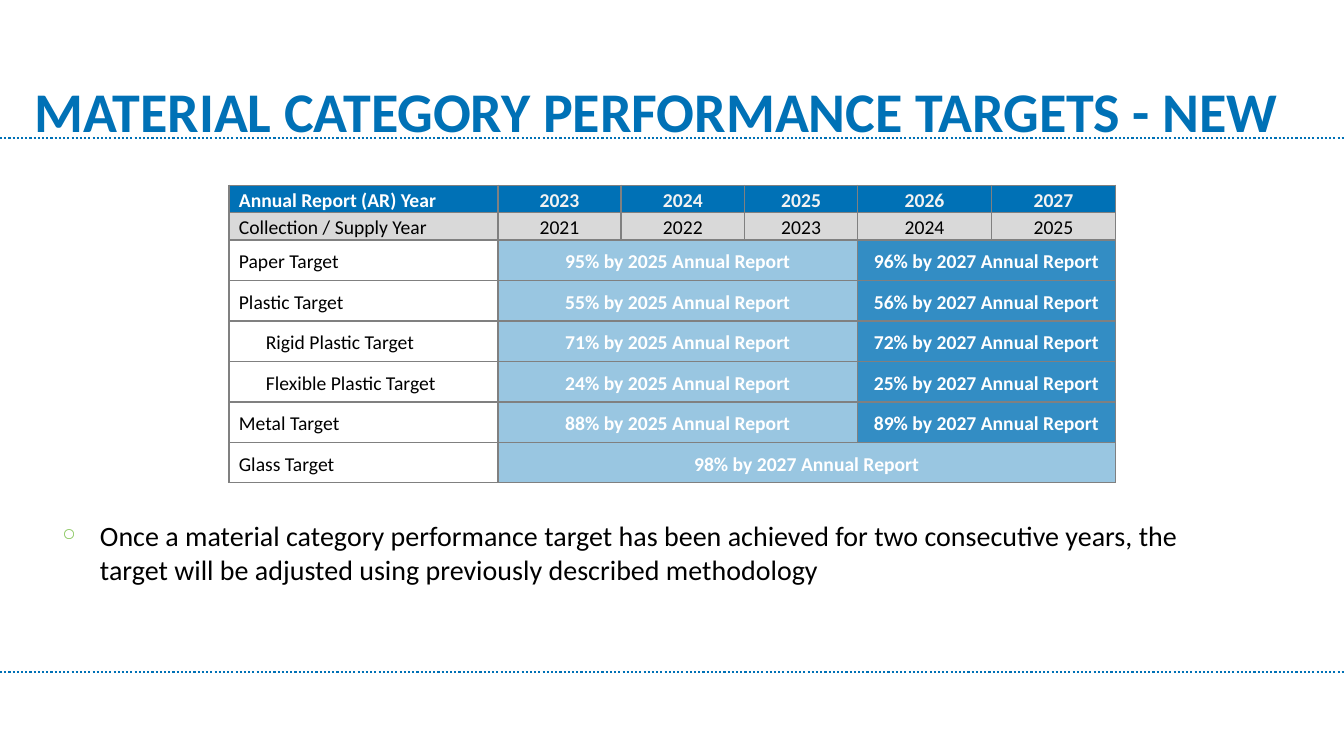
from lxml import etree
from pptx import Presentation
from pptx.dml.color import RGBColor
from pptx.enum.dml import MSO_LINE
from pptx.enum.shapes import MSO_CONNECTOR
from pptx.enum.text import MSO_ANCHOR, MSO_AUTO_SIZE, PP_ALIGN
from pptx.oxml.ns import qn
from pptx.util import Cm, Pt

BLUE = RGBColor(0x00, 0x71, 0xB6)
MID_BLUE = RGBColor(0x33, 0x8D, 0xC4)
LIGHT_BLUE = RGBColor(0x99, 0xC6, 0xE1)
GREY = RGBColor(0xD9, 0xD9, 0xD9)
BORDER_GREY = RGBColor(0x80, 0x80, 0x80)
PALE = RGBColor(0xF2, 0xF2, 0xF2)
GREEN = RGBColor(0x85, 0xC5, 0x59)
WHITE = RGBColor(0xFF, 0xFF, 0xFF)
BLACK = RGBColor(0x00, 0x00, 0x00)
LEFT, CENTER = PP_ALIGN.LEFT, PP_ALIGN.CENTER
MIDDLE, BOTTOM, TOP = MSO_ANCHOR.MIDDLE, MSO_ANCHOR.BOTTOM, MSO_ANCHOR.TOP
DOTTED = MSO_LINE.ROUND_DOT
STRAIGHT = MSO_CONNECTOR.STRAIGHT
NO_AUTOFIT = MSO_AUTO_SIZE.NONE
TITLE_ONLY = 5
SLIDE_WIDTH, SLIDE_HEIGHT = 33.87, 19.05

COLUMN_WIDTHS = [6.78, 3.1, 3.12, 2.84, 3.38, 3.12]
HEADER_HEIGHT, TARGET_HEIGHT = 0.69, 1.02
REPORT_YEARS = ["Annual Report (AR) Year", "2023", "2024", "2025", "2026", "2027"]
SUPPLY_YEARS = ["Collection / Supply Year", "2021", "2022", "2023", "2024", "2025"]
TARGETS = [
    ("Paper Target", 0, "95%", "96%"),
    ("Plastic Target", 0, "55%", "56%"),
    ("Rigid Plastic Target", 0.68, "71%", "72%"),
    ("Flexible Plastic Target", 0.68, "24%", "25%"),
    ("Metal Target", 0, "88%", "89%"),
    ("Glass Target", 0, None, "98%"),
]
ADJUSTMENT = (
    "Once a material category performance target has been achieved for two "
    "consecutive years, the target will be adjusted using previously described methodology"
)


class SlideBuilder:
    font_name = "Calibri"

    def __init__(self, deck):
        self.page = deck.slides.add_slide(deck.slide_layouts[TITLE_ONLY])

    def style(self, paragraph, size, color, bold=False, align=LEFT):
        paragraph.alignment = align
        paragraph.font.name = self.font_name
        paragraph.font.size = Pt(size)
        paragraph.font.bold = bold
        paragraph.font.color.rgb = color

    def title(self, text, left, top, width, height):
        box = self.page.shapes.title
        box.left, box.top, box.width, box.height = map(Cm, (left, top, width, height))
        frame = box.text_frame
        frame.text = text
        frame.word_wrap = True
        frame.auto_size = NO_AUTOFIT
        frame.vertical_anchor = MIDDLE
        self.style(frame.paragraphs[0], 40, BLUE, bold=True)

    def dotted_rule(self, y):
        rule = self.page.shapes.add_connector(STRAIGHT, 0, Cm(y), Cm(SLIDE_WIDTH), Cm(y))
        rule.line.color.rgb = BLUE
        rule.line.width = Pt(1.5)
        rule.line.dash_style = DOTTED
        etree.SubElement(rule._element.spPr, qn("a:effectLst"))

    def bullet(self, text, left, top, width, height):
        box = self.page.shapes.add_textbox(Cm(left), Cm(top), Cm(width), Cm(height))
        frame = box.text_frame
        frame.word_wrap = True
        frame.vertical_anchor = TOP
        paragraph = frame.paragraphs[0]
        paragraph.text = text
        properties = paragraph._p.get_or_add_pPr()
        properties.set("marL", str(Cm(0.95)))
        properties.set("indent", str(Cm(-0.95)))
        color = etree.SubElement(properties, qn("a:buClr"))
        etree.SubElement(color, qn("a:srgbClr"), val=str(GREEN))
        etree.SubElement(properties, qn("a:buSzPct"), val="61000")
        etree.SubElement(properties, qn("a:buChar"), char="○")
        self.style(paragraph, 20, BLACK)

    def table(self, left, top, widths, heights):
        frame = self.page.shapes.add_table(
            len(heights), len(widths), Cm(left), Cm(top), Cm(sum(widths)), Cm(sum(heights))
        )
        grid = frame.table
        for column, width in zip(grid.columns, widths):
            column.width = Cm(width)
        for row, height in zip(grid.rows, heights):
            row.height = Cm(height)
        for cell in grid.iter_cells():
            self.border(cell)
        return grid

    def border(self, cell):
        properties = cell._tc.get_or_add_tcPr()
        for side in ("a:lnL", "a:lnR", "a:lnT", "a:lnB"):
            line = etree.SubElement(properties, qn(side), w=str(Pt(1)))
            fill = etree.SubElement(line, qn("a:solidFill"))
            etree.SubElement(fill, qn("a:srgbClr"), val=str(BORDER_GREY))

    def cell(self, cell, text, fill, color, bold=False, align=CENTER,
             anchor=MIDDLE, inset=(0.25, 0), indent=0):
        cell.fill.solid()
        cell.fill.fore_color.rgb = fill
        cell.vertical_anchor = anchor
        side, edge = inset
        cell.margin_left = Cm(side + indent)
        cell.margin_right = Cm(side)
        cell.margin_top = cell.margin_bottom = Cm(edge)
        cell.text = text
        paragraph = cell.text_frame.paragraphs[0]
        paragraph.line_spacing = 1.15
        self.style(paragraph, 14, color, bold, align)

    def target(self, grid, row, first, last, share, year, fill):
        start = grid.cell(row, first)
        start.merge(grid.cell(row, last))
        self.cell(start, f"{share} by {year} Annual Report", fill, WHITE,
                  bold=True, inset=(0.33, 0.16))


def fill_targets_table(builder):
    heights = [HEADER_HEIGHT] * 2 + [TARGET_HEIGHT] * len(TARGETS)
    grid = builder.table(5.77, 4.67, COLUMN_WIDTHS, heights)
    for column, (report, supply) in enumerate(zip(REPORT_YEARS, SUPPLY_YEARS)):
        is_label = column == 0
        align = LEFT if is_label else CENTER
        builder.cell(grid.cell(0, column), report, BLUE, WHITE if is_label else PALE,
                     True, align, BOTTOM if is_label else MIDDLE)
        builder.cell(grid.cell(1, column), supply, GREY, BLACK, False, align, BOTTOM)
    for row, (label, indent, share_2025, share_2027) in enumerate(TARGETS, start=2):
        builder.cell(grid.cell(row, 0), label, WHITE, BLACK, align=LEFT, indent=indent)
        if share_2025:
            builder.target(grid, row, 1, 3, share_2025, 2025, LIGHT_BLUE)
            builder.target(grid, row, 4, 5, share_2027, 2027, MID_BLUE)
        else:
            builder.target(grid, row, 1, 5, share_2027, 2027, LIGHT_BLUE)


def main():
    deck = Presentation()
    deck.slide_width, deck.slide_height = Cm(SLIDE_WIDTH), Cm(SLIDE_HEIGHT)
    builder = SlideBuilder(deck)
    for y in (16.94, 3.48):
        builder.dotted_rule(y)
    builder.title("MATERIAL CATEGORY PERFORMANCE TARGETS - NEW", 0.61, 1.73, 32.36, 2.11)
    builder.bullet(ADJUSTMENT, 1.32, 12.95, 29.77, 2.87)
    fill_targets_table(builder)
    deck.save("out.pptx")


if __name__ == "__main__":
    main()
